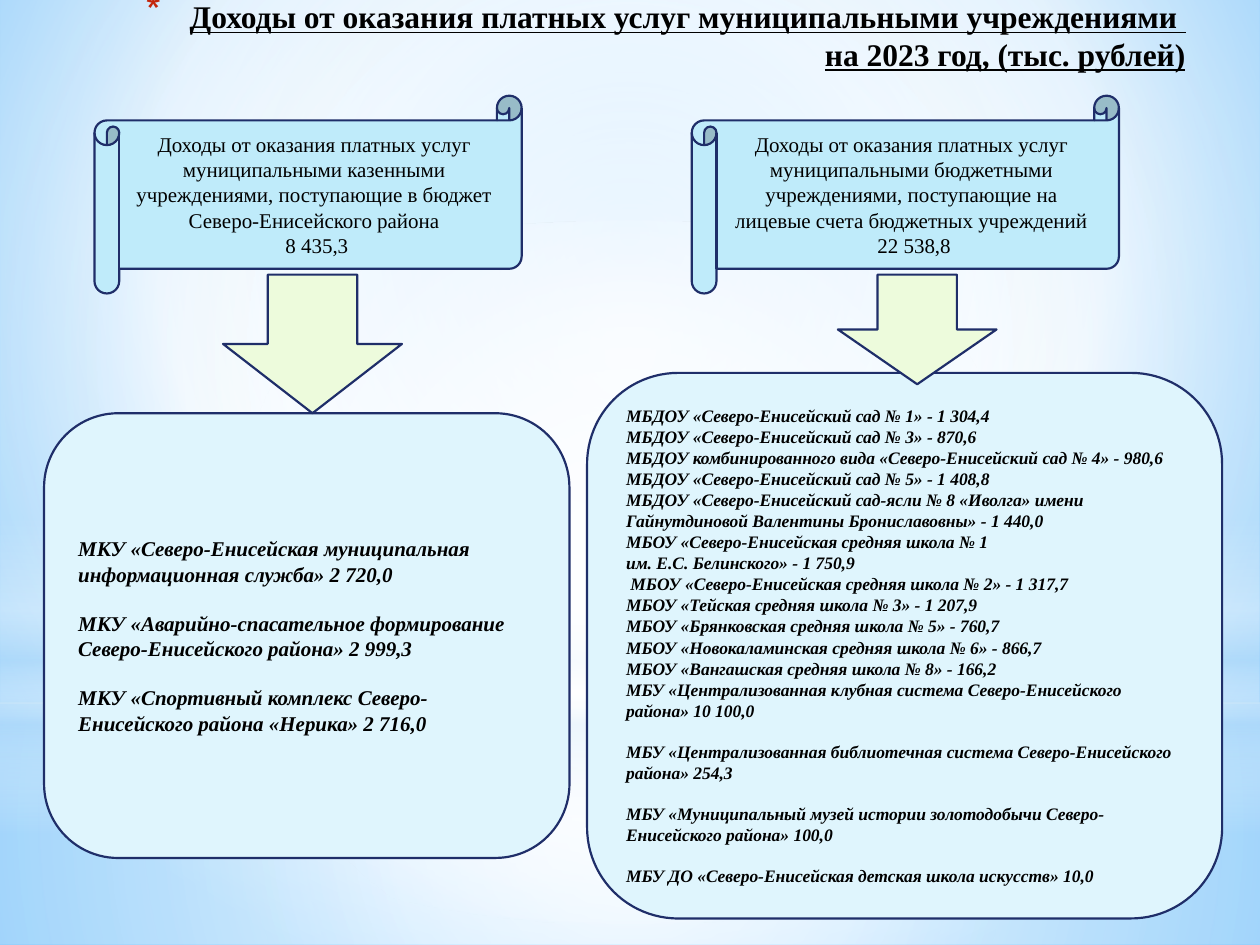
from copy import deepcopy
from dataclasses import dataclass

from lxml import etree
from pptx import Presentation
from pptx.dml.color import RGBColor
from pptx.enum import shapes, text
from pptx.oxml import ns, parse_xml
from pptx.util import Inches, Pt

SHAPE = shapes.MSO_SHAPE
ALIGN = text.PP_ALIGN
FONT = "Times New Roman"
NAVY, SKY, PALE, LIME = "1F2E69", "BFEBFA", "DFF5FD", "EDFBDC"
CENTRE = (50, 50, 50, 50)


@dataclass
class Backdrop:
    kind: int
    box: tuple
    stops: list  # (position %, colour, opacity %)
    focus: tuple | None = CENTRE  # None gives a vertical linear gradient


@dataclass
class Panel:
    kind: int
    box: tuple
    fill: str
    lines: tuple = ()
    size: float = 12
    align: int = ALIGN.LEFT
    strong: bool = False  # bold italic
    gap_from: int | None = None  # first line that is followed by a gap


BACKDROPS = [
    Backdrop(SHAPE.RECTANGLE, (0, 5.58, 10, 1.92),
             [(0, "FFFFFF", 91), (37, "FFFFFF", 76), (100, "B4DCFA", 79)]),
    Backdrop(SHAPE.RECTANGLE, (0, 0, 10, 5.58),
             [(0, "FFFFFF", 89), (48, "FFFFFF", 62), (100, "B4DCFA", 79)]),
    Backdrop(SHAPE.RECTANGLE, (0, 4.12, 10, 2.5),
             [(0, "FFFFFF", 0), (29, "FFFFFF", 30), (45, "B4DCFA", 40),
              (55, "FFFFFF", 26), (65, "B4DCFA", 60), (100, "FFFFFF", 0)], None),
    Backdrop(SHAPE.OVAL, (0, 1.75, 10, 5.58),
             [(0, "FFFFFF", 100), (56, "FFFFFF", 0)]),
]

PANELS = [
    Panel(SHAPE.HORIZONTAL_SCROLL, (0.75, 0.76, 3.39, 1.57), SKY, (
        "Доходы от оказания платных услуг муниципальными казенными учреждениями, "
        "поступающие в бюджет Северо-Енисейского района",
        " 8 435,3"), align=ALIGN.CENTER),
    Panel(SHAPE.HORIZONTAL_SCROLL, (5.49, 0.76, 3.39, 1.57), SKY, (
        "Доходы от оказания платных услуг муниципальными бюджетными учреждениями, "
        "поступающие на лицевые счета бюджетных учреждений",
        " 22 538,8"), align=ALIGN.CENTER),
    Panel(SHAPE.ROUNDED_RECTANGLE, (0.35, 3.28, 4.17, 3.53), PALE, (
        "МКУ «Северо-Енисейская муниципальная информационная служба» 2 720,0",
        "МКУ «Аварийно-спасательное формирование Северо-Енисейского района» 2 999,3",
        "МКУ «Спортивный комплекс Северо-Енисейского района «Нерика» 2 716,0",
    ), strong=True, gap_from=0),
    Panel(SHAPE.ROUNDED_RECTANGLE, (4.66, 2.96, 5.04, 4.33), PALE, (
        "МБДОУ «Северо-Енисейский сад № 1» - 1 304,4",
        "МБДОУ «Северо-Енисейский сад № 3» - 870,6",
        "МБДОУ комбинированного вида «Северо-Енисейский сад № 4» - 980,6",
        "МБДОУ «Северо-Енисейский сад № 5» - 1 408,8",
        "МБДОУ «Северо-Енисейский сад-ясли № 8 «Иволга» имени "
        "Гайнутдиновой Валентины Брониславовны» - 1 440,0",
        "МБОУ «Северо-Енисейская средняя школа № 1",
        "им. Е.С. Белинского» - 1 750,9",
        " МБОУ «Северо-Енисейская средняя школа № 2» - 1 317,7",
        "МБОУ «Тейская средняя школа № 3» - 1 207,9",
        "МБОУ «Брянковская средняя школа № 5» - 760,7",
        "МБОУ «Новокаламинская средняя школа № 6» - 866,7",
        "МБОУ «Вангашская средняя школа № 8» - 166,2",
        "МБУ «Централизованная клубная система Северо-Енисейского района» 10 100,0",
        "МБУ «Централизованная библиотечная система Северо-Енисейского района» 254,3",
        "МБУ «Муниципальный музей истории золотодобычи Северо-Енисейского района» 100,0",
        "МБУ ДО «Северо-Енисейская детская школа искусств» 10,0",
    ), size=10, strong=True, gap_from=12),
    Panel(SHAPE.DOWN_ARROW, (1.77, 2.18, 1.42, 1.1), LIME),
    Panel(SHAPE.DOWN_ARROW, (6.65, 2.18, 1.26, 0.87), LIME),
]


def rgb(value: str) -> RGBColor:
    return RGBColor.from_string(value)


def write(p, content: str, *, size: float, align: int, bold: bool = False,
          italic: bool = False, underline: bool = False) -> None:
    """Fill a paragraph; a vertical tab in the content is a line break."""
    p.text = content
    p.alignment = align
    for r in p.runs:
        f = r.font
        f.name, f.size, f.bold, f.italic = FONT, Pt(size), bold, italic
        f.underline = underline
        f.color.rgb = rgb("000000")
    for br in p._p.findall(ns.qn("a:br")):
        br.insert(0, deepcopy(p.runs[0]._r.rPr))


def set_gradient(props, stops: list, focus: tuple | None) -> None:
    """Replace the solid fill in a properties element with a gradient."""
    marks = "".join(
        f'<a:gs pos="{pos * 1000}"><a:srgbClr val="{color}">'
        f'<a:alpha val="{alpha * 1000}"/></a:srgbClr></a:gs>'
        for pos, color, alpha in stops)
    if focus:
        sides = " ".join(f'{k}="{v * 1000}"' for k, v in zip("ltrb", focus))
        course = f'<a:path path="circle"><a:fillToRect {sides}/></a:path>'
    else:
        course = '<a:lin ang="5400000" scaled="0"/>'
    grad = parse_xml(f'<a:gradFill {ns.nsdecls("a")} rotWithShape="1">'
                     f'<a:gsLst>{marks}</a:gsLst>{course}</a:gradFill>')
    props.replace(props.find(ns.qn("a:solidFill")), grad)


def add_shape(slide, kind: int, box: tuple):
    sp = slide.shapes.add_shape(kind, *map(Inches, box))
    sp.shadow.inherit = False
    sp.fill.solid()
    return sp


def draw_backdrop(slide, item: Backdrop) -> None:
    sp = add_shape(slide, item.kind, item.box)
    sp.line.fill.background()
    set_gradient(sp._element.spPr, item.stops, item.focus)


def draw_panel(slide, item: Panel) -> None:
    sp = add_shape(slide, item.kind, item.box)
    sp.fill.fore_color.rgb = rgb(item.fill)
    sp.line.color.rgb = rgb(NAVY)
    sp.line.width = Pt(1.25)
    tf = sp.text_frame
    tf.word_wrap = True
    tf.vertical_anchor = text.MSO_ANCHOR.MIDDLE
    for i, line in enumerate(item.lines):
        p = tf.add_paragraph() if i else tf.paragraphs[0]
        write(p, line, size=item.size, align=item.align,
              bold=item.strong, italic=item.strong)
        if item.gap_from is not None and item.gap_from <= i < len(item.lines) - 1:
            p.space_after = Pt(item.size * 1.15)


def draw_title(slide) -> None:
    title = slide.shapes.title
    slide.shapes._spTree.append(title._element)  # in front of the backdrops
    title.left, title.top, title.width, title.height = map(
        Inches, (0.51, -0.07, 9, 1.01))
    tf = title.text_frame
    tf.word_wrap = True
    tf.auto_size = text.MSO_AUTO_SIZE.NONE
    tf.vertical_anchor = text.MSO_ANCHOR.TOP
    p = tf.paragraphs[0]
    write(p, "Доходы от оказания платных услуг муниципальными учреждениями "
             "\vна 2023 год, (тыс. рублей)",
          size=18, align=ALIGN.RIGHT, bold=True, underline=True)
    pPr = p._p.get_or_add_pPr()
    pPr.set("marL", str(Inches(0.35)))
    pPr.set("indent", str(-Inches(0.35)))
    color = etree.SubElement(pPr, ns.qn("a:buClr"))
    etree.SubElement(color, ns.qn("a:srgbClr"), val="C3260C")
    etree.SubElement(pPr, ns.qn("a:buSzPct"), val="128000")
    etree.SubElement(pPr, ns.qn("a:buChar"), char="*")


def main() -> None:
    prs = Presentation()
    prs.slide_width, prs.slide_height = Inches(10), Inches(7.5)
    slide = prs.slides.add_slide(prs.slide_layouts[5])
    slide.background.fill.solid()
    set_gradient(slide._element.find(".//" + ns.qn("p:bgPr")),
                 [(0, "9ED5FF", 100), (60, "FFFFFF", 100), (100, "5BB9FF", 100)],
                 (20, 10, 20, 60))
    for item in BACKDROPS:
        draw_backdrop(slide, item)
    draw_title(slide)
    for item in PANELS:
        draw_panel(slide, item)
    prs.save("out.pptx")


if __name__ == "__main__":
    main()
